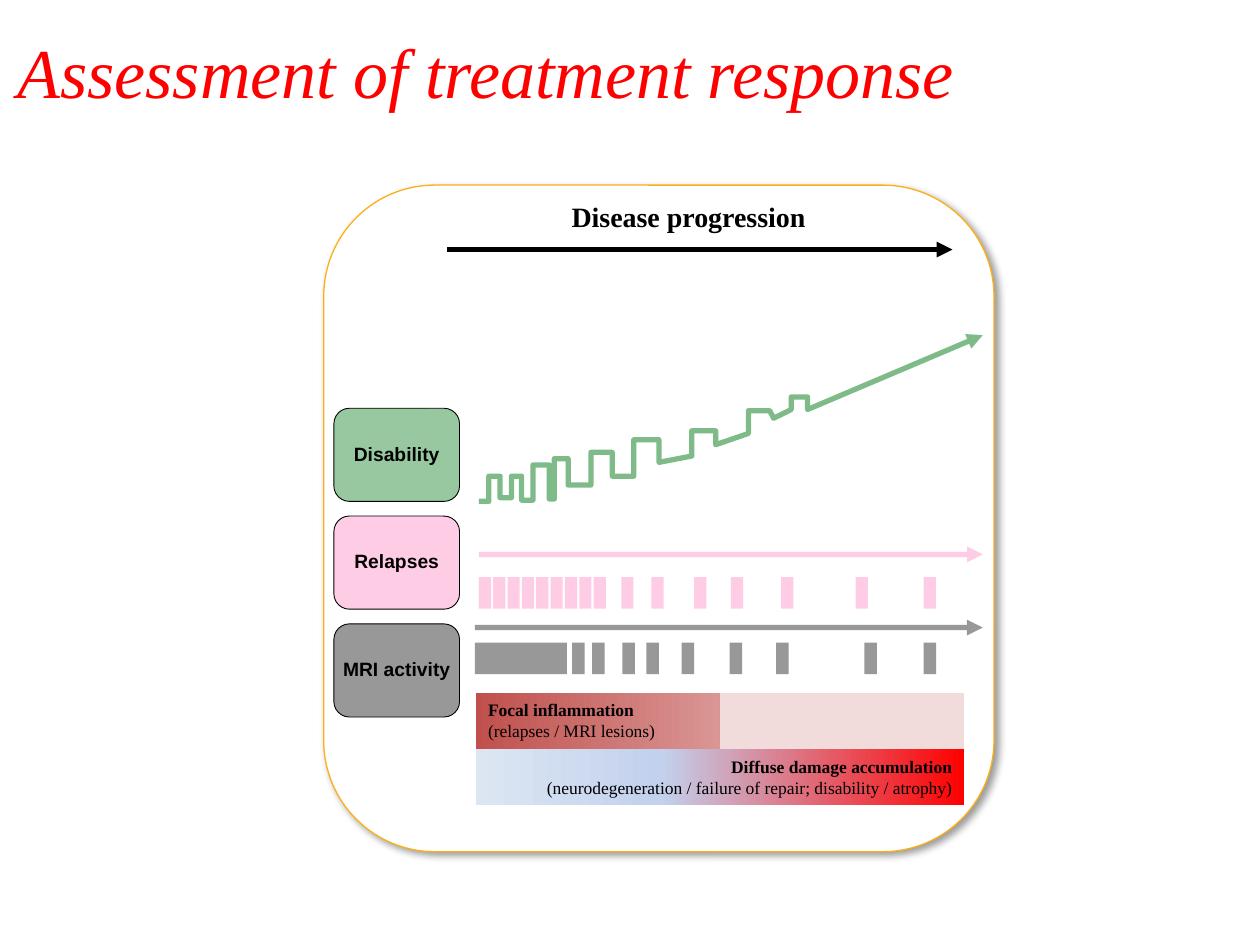
from lxml.etree import SubElement
from pptx import Presentation
from pptx.dml.color import RGBColor
from pptx.enum.shapes import MSO_CONNECTOR, MSO_SHAPE
from pptx.enum.text import MSO_ANCHOR, MSO_AUTO_SIZE, PP_ALIGN
from pptx.oxml.ns import qn
from pptx.util import Pt

COLORS = {
    "title": "FF0000", "text": "000000", "panel": "FFFFFF", "border": "FCAF17",
    "disability": "7FBB89", "relapses": "FFABD5", "mri": "7F7F7F",
    "focal_dark": "C0504D", "focal_mid": "D99694", "focal_pale": "F2DCDB",
    "diffuse_pale": "DCE6F2", "diffuse_mid": "C2D1ED", "diffuse_dark": "FF0000",
}
ALPHA = {"disability": 80, "relapses": 60, "mri": 80}
SERIF = "Times New Roman"
LABELS = [("Disability", "disability"), ("Relapses", "relapses"), ("MRI activity", "mri")]
RELAPSES = [(8.2 * i, 7) for i in range(9)] + [
    (x, 7) for x in (81.4, 98.6, 123.1, 144, 172.8, 215.3, 254.2)]
MRI_MARKS = [(0, 52.6)] + [
    (x, 7.2) for x in (55.5, 67, 84.3, 98, 118.1, 145.5, 172.1, 222.5, 256.4)]
ATTACKS = [
    (5.8, 95, 80.6, 12.2, 12.2, 92.9), (18.7, 92.9, 80.6, 24.5, 24.5, 94.3),
    (31, 94.3, 74.2, 40.3, 40.3, 93.6), (43.2, 93.6, 70.6, 51.1, 51.1, 85.7),
    (64.1, 85.7, 67, 76.3, 76.3, 80.6), (88.6, 80.6, 59.8, 103, 103, 72.7),
    (121.7, 69.1, 54.7, 135.4, 135.4, 62.6), (154.1, 56.2, 43.2, 166.3, 168.5, 47.5),
    (178.6, 42.5, 35.3, 187.9, 187.9, 42.5),
]


def rgb(name):
    return RGBColor.from_string(COLORS[name])


def set_alpha(parent, alpha):
    for clr in parent.iter(qn("a:srgbClr")):
        SubElement(clr, qn("a:alpha"), val=str(alpha * 1000))


def style_font(font, **values):
    font.color.rgb = rgb(values.pop("color", "text"))
    for key, value in values.items():
        setattr(font, key, value)


def set_margins(tf, size):
    for side in ("left", "top", "right", "bottom"):
        setattr(tf, f"margin_{side}", size)


def add_box(s, kind, box, fill, line=None, width=0, alpha=100):
    sp = s.shapes.add_shape(kind, *map(Pt, box))
    sp.shadow.inherit = False
    sp.fill.solid()
    sp.fill.fore_color.rgb = rgb(fill)
    if alpha < 100:
        set_alpha(sp._element.spPr, alpha)
    if line:
        sp.line.color.rgb = rgb(line)
        sp.line.width = Pt(width)
    else:
        sp.line.fill.background()
    return sp


def style_arrow(sp, color, alpha=100):
    sp.line.color.rgb = rgb(color)
    sp.line.width = Pt(3)
    ln = sp.line._get_or_add_ln()
    if alpha < 100:
        set_alpha(ln, alpha)
    SubElement(ln, qn("a:tailEnd"), type="triangle")


def add_arrow(s, x, y, length, color, alpha=100):
    sp = s.shapes.add_connector(
        MSO_CONNECTOR.STRAIGHT, Pt(x), Pt(y), Pt(x + length), Pt(y))
    style_arrow(sp, color, alpha)
    SubElement(sp._element.spPr, qn("a:effectLst"))


def add_text(s, box, lines, size, align):
    sp = s.shapes.add_textbox(*map(Pt, box))
    tf = sp.text_frame
    tf.word_wrap = True
    tf.auto_size = MSO_AUTO_SIZE.SHAPE_TO_FIT_TEXT
    for i, line in enumerate(lines):
        p = tf.paragraphs[0] if i == 0 else tf.add_paragraph()
        p.alignment = align
        r = p.add_run()
        r.text = line
        style_font(r.font, name=SERIF, size=Pt(size), bold=i == 0)
    return tf


def add_title(s, box):
    sp = s.shapes.title
    sp.left, sp.top, sp.width, sp.height = map(Pt, box)
    tf = sp.text_frame
    tf.vertical_anchor = MSO_ANCHOR.MIDDLE
    p = tf.paragraphs[0]
    p.alignment = PP_ALIGN.LEFT
    r = p.add_run()
    r.text = "Assessment of treatment response"
    style_font(r.font, color="title", name=SERIF, size=Pt(40), italic=True)


def add_panel(s, box):
    sp = add_box(s, MSO_SHAPE.ROUNDED_RECTANGLE, box, "panel", "border", 0.75)
    effects = sp._element.spPr.find(qn("a:effectLst"))
    shadow = SubElement(effects, qn("a:outerShdw"), blurRad=str(Pt(4)),
                        dist=str(Pt(3)), dir="2700000", algn="tl", rotWithShape="0")
    clr = SubElement(shadow, qn("a:srgbClr"), val=COLORS["text"])
    SubElement(clr, qn("a:alpha"), val="40000")


def add_progression(s, box):
    x, y, w, h = box
    tf = add_text(s, (x - 5, y, w - 3, 19.4), ["Disease progression"], 16, PP_ALIGN.CENTER)
    set_margins(tf, 0)
    add_arrow(s, x, y + h, w, "text")


def add_disability_curve(s, box):
    x, y, w, h = box
    points = [(0, h)]
    for rise, start, top, fall, end, base in ATTACKS:
        points += [(rise, start), (rise, top), (fall, top), (end, base)]
    points.append((w, 0))
    points = [(Pt(x + dx), Pt(y + dy)) for dx, dy in points]
    builder = s.shapes.build_freeform(*points[0])
    builder.add_line_segments(points[1:], close=False)
    sp = builder.convert_to_shape()
    sp.shadow.inherit = False
    sp.fill.background()
    style_arrow(sp, "disability")


def add_track(s, box, marks, color):
    x, y, w, h = box
    add_arrow(s, x, y, w, color, ALPHA[color])
    for dx, width in marks:
        add_box(s, MSO_SHAPE.RECTANGLE, (x + dx, y + h - 18, width, 18),
                color, alpha=ALPHA[color])


def add_labels(s, box):
    x, y, w, h = box
    gap = 8.4
    height = (h - gap * (len(LABELS) - 1)) / len(LABELS)
    for i, (text, color) in enumerate(LABELS):
        sp = add_box(s, MSO_SHAPE.ROUNDED_RECTANGLE,
                     (x, y + i * (height + gap), w, height),
                     color, "text", 0.5, ALPHA[color])
        tf = sp.text_frame
        set_margins(tf, 0)
        tf.vertical_anchor = MSO_ANCHOR.MIDDLE
        p = tf.paragraphs[0]
        p.alignment = PP_ALIGN.CENTER
        p.line_spacing = 0.9
        r = p.add_run()
        r.text = text
        style_font(r.font, name="Arial", size=Pt(11), bold=True)


def add_gradient_band(s, box, stops, lines, align):
    sp = s.shapes.add_shape(MSO_SHAPE.FLOWCHART_PROCESS, *map(Pt, box))
    sp.shadow.inherit = False
    sp.line.fill.background()
    sp.fill.gradient()
    sp.fill.gradient_angle = 0
    gs_list = sp._element.spPr.find(qn("a:gradFill")).find(qn("a:gsLst"))
    for gs in list(gs_list):
        gs_list.remove(gs)
    for position, color in stops:
        gs = SubElement(gs_list, qn("a:gs"), pos=str(position * 1000))
        SubElement(gs, qn("a:srgbClr"), val=COLORS[color])
    add_text(s, box, lines, 10, align)


def main():
    prs = Presentation()
    prs.slide_width, prs.slide_height = Pt(720), Pt(540)
    s = prs.slides.add_slide(prs.slide_layouts[5])
    add_title(s, (2.9, -5, 648, 90))
    add_panel(s, (185, 105.8, 383, 380.9))
    add_progression(s, (255.6, 113.8, 288.7, 28.8))
    add_disability_curve(s, (273.6, 191.5, 288, 95))
    add_track(s, (273.6, 316.8, 288, 31), RELAPSES, "relapses")
    add_track(s, (271.4, 358.6, 290.2, 26.6), MRI_MARKS, "mri")
    add_labels(s, (190.8, 233.3, 71.8, 176.4))
    add_gradient_band(
        s, (271.8, 428.2, 279.2, 31.8),
        [(0, "diffuse_pale"), (38, "diffuse_mid"), (100, "diffuse_dark")],
        ["Diffuse damage accumulation",
         "(neurodegeneration / failure of repair; disability / atrophy)"], PP_ALIGN.RIGHT)
    add_gradient_band(
        s, (271.8, 396, 279.2, 32.2),
        [(0, "focal_dark"), (50, "focal_mid"), (50, "focal_pale"), (100, "focal_pale")],
        ["Focal inflammation", "(relapses / MRI lesions)"], PP_ALIGN.LEFT)
    prs.save("out.pptx")


if __name__ == "__main__":
    main()
